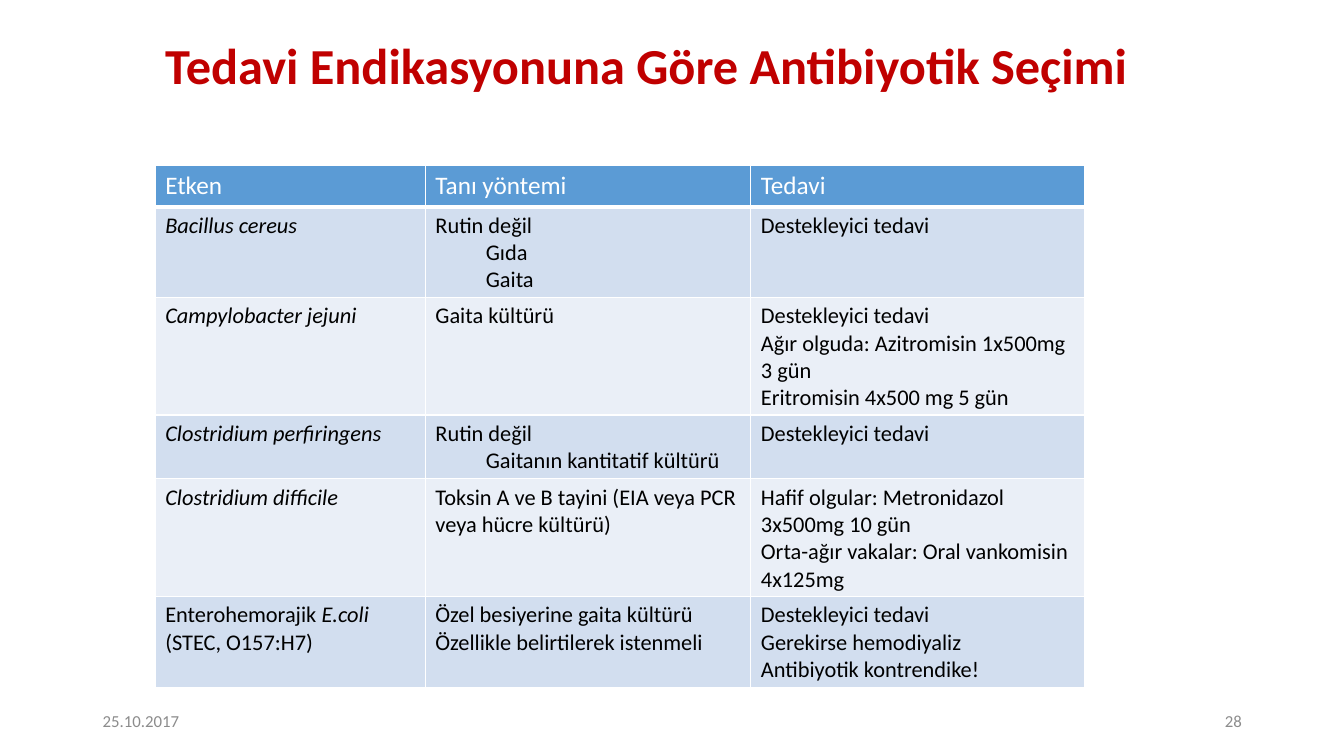
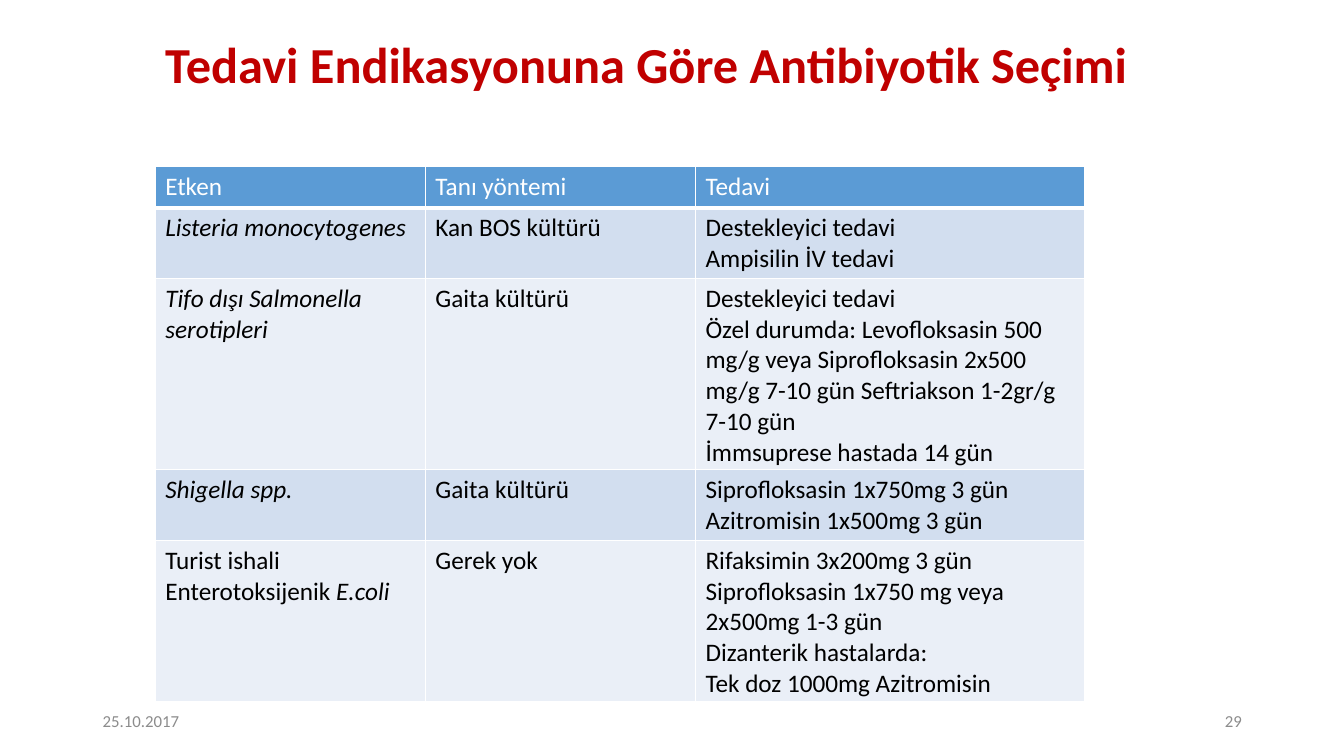
"""Build two slides that list antibiotic choices by pathogen."""
import pptx
import pptx.dml.color
import pptx.enum.text
import pptx.oxml
import pptx.oxml.ns
import pptx.util

WIDE = pptx.util.Inches(13.33)
HIGH = pptx.util.Inches(7.5)
FONT = "Calibri"
RED, BLUE, WHITE, BLACK, GREY = "C00000", "5B9BD5", "FFFFFF", "000000", "8C8C8C"
BANDS = ("D2DEEF", "EAEFF7")
LEFT = 11.55
LINE = 5.47
TITLE = "Tedavi Endikasyonuna Göre Antibiyotik Seçimi"
HEADS = ("Etken", "Tanı yöntemi", "Tedavi")
DATE = "25.10.2017"
ANCHOR = pptx.enum.text.MSO_ANCHOR
ALIGN = pptx.enum.text.PP_ALIGN

SLIDES = (
    {
        "page": "28",
        "title": (2.67, 76.43, 10.53),
        "top": 21.87,
        "tall": 68.93,
        "cols": (20.1, 24.22, 24.83),
        "size": 16,
        "rows": (
            ("*Bacillus cereus*", "Rutin değil\n>Gıda\n>Gaita", "Destekleyici tedavi"),
            ("*Campylobacter jejuni*", "Gaita kültürü",
             "Destekleyici tedavi\nAğır olguda: Azitromisin 1x500mg 3 gün\n"
             "Eritromisin 4x500 mg 5 gün"),
            ("*Clostridium perfiringens*", "Rutin değil\n>Gaitanın kantitatif kültürü",
             "Destekleyici tedavi"),
            ("*Clostridium difficile*",
             "Toksin A ve B tayini (EIA veya PCR veya hücre kültürü)",
             "Hafif olgular: Metronidazol 3x500mg 10 gün\n"
             "Orta-ağır vakalar: Oral vankomisin 4x125mg"),
            ("Enterohemorajik *E.coli* (STEC, O157:H7)",
             "Özel besiyerine gaita kültürü Özellikle belirtilerek istenmeli",
             "Destekleyici tedavi\nGerekirse hemodiyaliz\nAntibiyotik kontrendike!"),
        ),
    },
    {
        "page": "29",
        "title": (4.67, 75.3, 8.4),
        "top": 22,
        "tall": 70.8,
        "cols": (20.1, 20.1, 28.95),
        "size": 18,
        "rows": (
            ("*Listeria monocytogenes*", "Kan BOS kültürü",
             "Destekleyici tedavi\nAmpisilin İV tedavi"),
            ("*Tifo dışı Salmonella serotipleri*", "Gaita kültürü",
             "Destekleyici tedavi\nÖzel durumda: Levofloksasin 500 mg/g veya "
             "Siprofloksasin 2x500 mg/g 7-10 gün Seftriakson 1-2gr/g 7-10 gün\n"
             "İmmsuprese hastada 14 gün"),
            ("*Shigella spp.*", "Gaita kültürü",
             "Siprofloksasin 1x750mg 3 gün\nAzitromisin 1x500mg 3 gün"),
            ("Turist ishali Enterotoksijenik *E.coli*", "Gerek yok",
             "Rifaksimin 3x200mg 3 gün\nSiprofloksasin 1x750 mg veya 2x500mg 1-3 gün\n"
             "Dizanterik hastalarda:\nTek doz 1000mg Azitromisin"),
        ),
    },
)


def across(n):
    return int(WIDE * n / 100)


def down(n):
    return int(HIGH * n / 100)


def tint(code):
    return pptx.dml.color.RGBColor.from_string(code)


def write(frame, text, size, color, bold=False, align=ALIGN.LEFT):
    lines = text.split("\n")
    for i, line in enumerate(lines):
        para = frame.paragraphs[0] if i == 0 else frame.add_paragraph()
        para.alignment = align
        if line.startswith(">"):
            para.level = 1
            para._p.get_or_add_pPr().set("marL", str(pptx.util.Inches(0.5)))
        for j, part in enumerate(line.lstrip(">").split("*")):
            if part:
                run = para.add_run()
                run.text = part
                font = run.font
                font.name, font.size = FONT, pptx.util.Pt(size)
                font.bold, font.italic = bold, j % 2 == 1
                font.color.rgb = tint(color)


def label(slide, place, text, size, color, anchor, **style):
    x, y, w, h = place
    box = slide.shapes.add_textbox(across(x), down(y), across(w), down(h))
    frame = box.text_frame
    frame.word_wrap = True
    frame.vertical_anchor = anchor
    write(frame, text, size, color, **style)


def edge(cell, base):
    props = cell._tc.get_or_add_tcPr()
    space = pptx.oxml.ns.nsdecls("a")
    for side, width in (("L", 1), ("R", 1), ("T", 1), ("B", base)):
        props.append(pptx.oxml.parse_xml(
            f'<a:ln{side} {space} w="{pptx.util.Pt(width)}"><a:solidFill>'
            f'<a:srgbClr val="{WHITE}"/></a:solidFill></a:ln{side}>'))


def grid(slide, top, tall, cols, rows, size):
    shape = slide.shapes.add_table(
        len(rows) + 1, len(cols), across(LEFT), down(top), across(sum(cols)), down(tall))
    table = shape.table
    for col, width in zip(table.columns, cols):
        col.width = across(width)
    for r, texts in enumerate((HEADS,) + rows):
        table.rows[r].height = down(LINE)
        head = r == 0
        for c, text in enumerate(texts):
            cell = table.cell(r, c)
            edge(cell, 3 if head else 1)
            cell.fill.solid()
            cell.fill.fore_color.rgb = tint(BLUE if head else BANDS[(r - 1) % 2])
            write(cell.text_frame, text, 18 if head else size, WHITE if head else BLACK)
    shape.height = down(tall)


def foot(slide, page):
    for x, text, align in ((70.65, page, ALIGN.RIGHT), (6.9, DATE, ALIGN.LEFT)):
        label(slide, (x, 92.67, 22.5, 5.33), text, 12, GREY, ANCHOR.MIDDLE, align=align)


def main():
    deck = pptx.Presentation()
    deck.slide_width, deck.slide_height = WIDE, HIGH
    for data in SLIDES:
        slide = deck.slides.add_slide(deck.slide_layouts[6])
        y, w, h = data["title"]
        label(slide, (LEFT, y, w, h), TITLE, 36, RED, ANCHOR.BOTTOM, bold=True)
        grid(slide, data["top"], data["tall"], data["cols"], data["rows"], data["size"])
        foot(slide, data["page"])
    deck.save("out.pptx")


if __name__ == "__main__":
    main()
